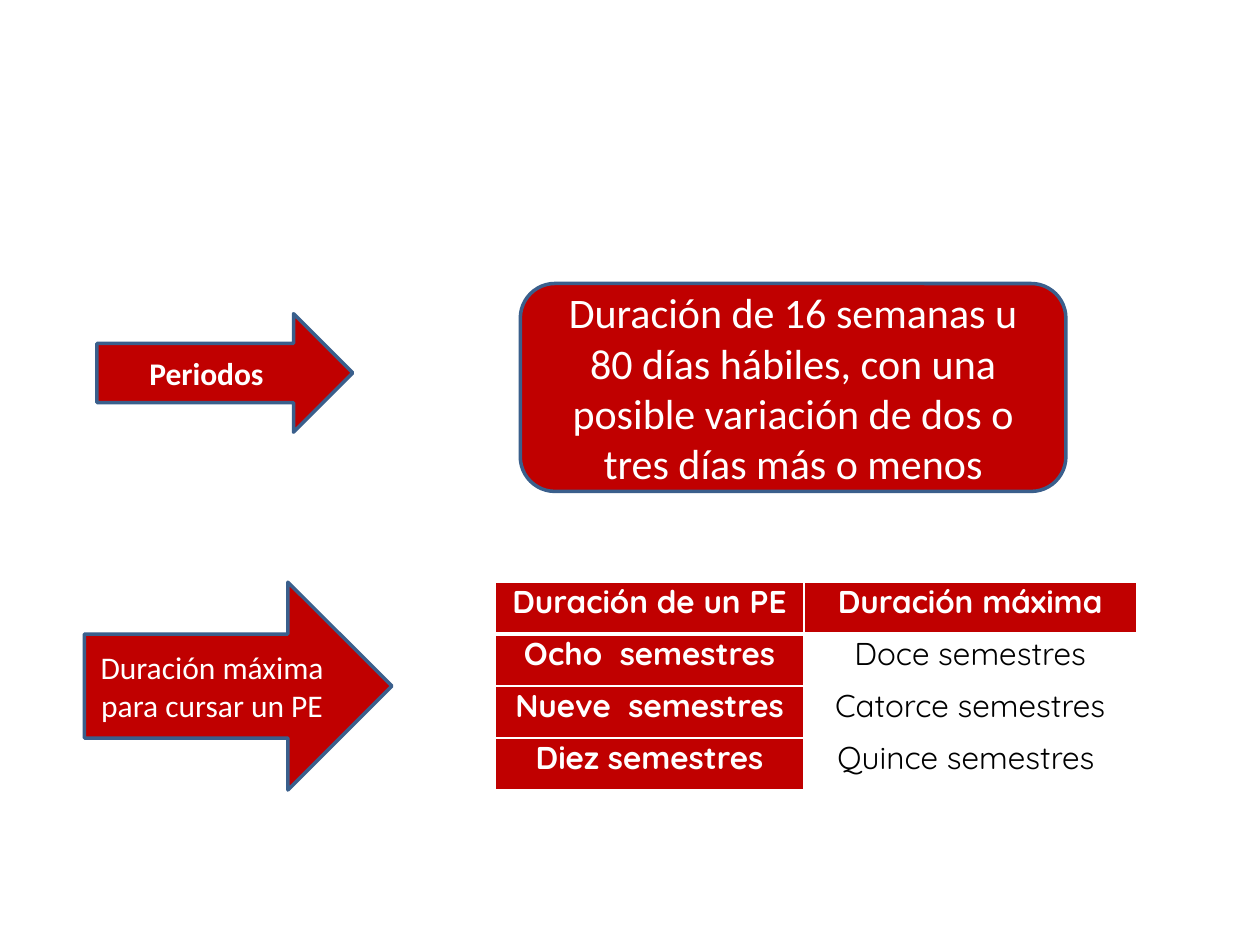
from dataclasses import dataclass

from lxml.etree import SubElement
from pptx import Presentation
from pptx.dml.color import RGBColor
from pptx.enum.shapes import MSO_SHAPE
from pptx.enum.text import MSO_ANCHOR, PP_ALIGN
from pptx.oxml.ns import qn
from pptx.util import Inches, Pt


@dataclass(frozen=True)
class Theme:
    red: RGBColor = RGBColor(0xC0, 0x00, 0x00)
    outline: RGBColor = RGBColor(0x3A, 0x5F, 0x8C)
    white: RGBColor = RGBColor(0xFF, 0xFF, 0xFF)
    black: RGBColor = RGBColor(0x00, 0x00, 0x00)
    shape_font: str = "Calibri"
    table_font: str = "Quicksand"
    body: Pt = Pt(18)
    large: Pt = Pt(24)
    outline_width: Pt = Pt(2)
    border: Pt = Pt(1)
    header_border: Pt = Pt(3)


THEME = Theme()


@dataclass(frozen=True)
class Block:
    kind: MSO_SHAPE
    left: float
    top: float
    width: float
    height: float
    text: str
    size: Pt = THEME.body
    bold: bool = False


BLOCKS = [
    Block(MSO_SHAPE.RIGHT_ARROW, 0.77, 2.49, 2.03, 0.94, "Periodos ", bold=True),
    Block(MSO_SHAPE.ROUNDED_RECTANGLE, 4.13, 2.25, 4.33, 1.65,
          "Duración de 16 semanas u 80 días hábiles, con una posible "
          "variación de dos o tres días más o menos", size=THEME.large),
    Block(MSO_SHAPE.RIGHT_ARROW, 0.67, 4.62, 2.44, 1.65,
          "Duración máxima para cursar un PE"),
]

DURATIONS = [
    ("Duración de un PE", "Duración máxima"),
    ("Ocho  semestres", "Doce semestres"),
    ("Nueve  semestres", "Catorce semestres"),
    ("Diez semestres", "Quince semestres "),
]
COLUMN_WIDTHS = (2.45, 2.64)
TABLE_HEIGHT = 1.65


def write_centred(tf, text: str, font: dict) -> None:
    p = tf.paragraphs[0]
    p.alignment = PP_ALIGN.CENTER
    r = p.add_run()
    r.text = text
    color = font["color"]
    for name, value in font.items():
        if name != "color":
            setattr(r.font, name, value)
    r.font.color.rgb = color


def add_block(s, block: Block) -> None:
    sp = s.shapes.add_shape(block.kind, Inches(block.left), Inches(block.top),
                            Inches(block.width), Inches(block.height))
    sp.shadow.inherit = False
    sp.fill.solid()
    sp.fill.fore_color.rgb = THEME.red
    sp.line.color.rgb = THEME.outline
    sp.line.width = THEME.outline_width
    tf = sp.text_frame
    tf.word_wrap = True
    tf.vertical_anchor = MSO_ANCHOR.MIDDLE
    write_centred(tf, block.text, {
        "name": THEME.shape_font, "size": block.size,
        "bold": block.bold, "color": THEME.white})


def set_borders(cell, widths: dict[str, Pt]) -> None:
    """Draw white cell borders; they must precede the fill in the XML."""
    tcPr = cell._tc.get_or_add_tcPr()
    for side, width in widths.items():
        ln = SubElement(tcPr, qn(f"a:ln{side}"), w=str(int(width)))
        fill = SubElement(ln, qn("a:solidFill"))
        SubElement(fill, qn("a:srgbClr"), val=str(THEME.white))


def add_durations_table(s, left: float, top: float) -> None:
    table = s.shapes.add_table(
        len(DURATIONS), len(COLUMN_WIDTHS), Inches(left), Inches(top),
        Inches(sum(COLUMN_WIDTHS)), Inches(TABLE_HEIGHT)).table
    for column, width in zip(table.columns, COLUMN_WIDTHS):
        column.width = Inches(width)

    margins = {"margin_left": Inches(0.07), "margin_right": Inches(0.07),
               "margin_top": 0, "margin_bottom": 0}
    for i, row in enumerate(DURATIONS):
        for j, text in enumerate(row):
            cell = table.cell(i, j)
            heading = i == 0 or j == 0
            for name, value in margins.items():
                setattr(cell, name, value)
            borders = dict.fromkeys("LRTB", THEME.border)
            if i == 0:
                borders["B"] = THEME.header_border
            elif i == 1:
                borders["T"] = THEME.header_border
            set_borders(cell, borders)
            cell.fill.solid()
            cell.fill.fore_color.rgb = THEME.red if heading else THEME.white
            write_centred(cell.text_frame, text, {
                "name": THEME.table_font, "size": THEME.body, "bold": heading,
                "color": THEME.white if heading else THEME.black})


def main() -> None:
    prs = Presentation()
    prs.slide_width, prs.slide_height = Inches(10), Inches(7.5)
    s = prs.slides.add_slide(prs.slide_layouts[6])
    for block in BLOCKS:
        add_block(s, block)
    add_durations_table(s, 3.93, 4.62)
    prs.save("out.pptx")


if __name__ == "__main__":
    main()
